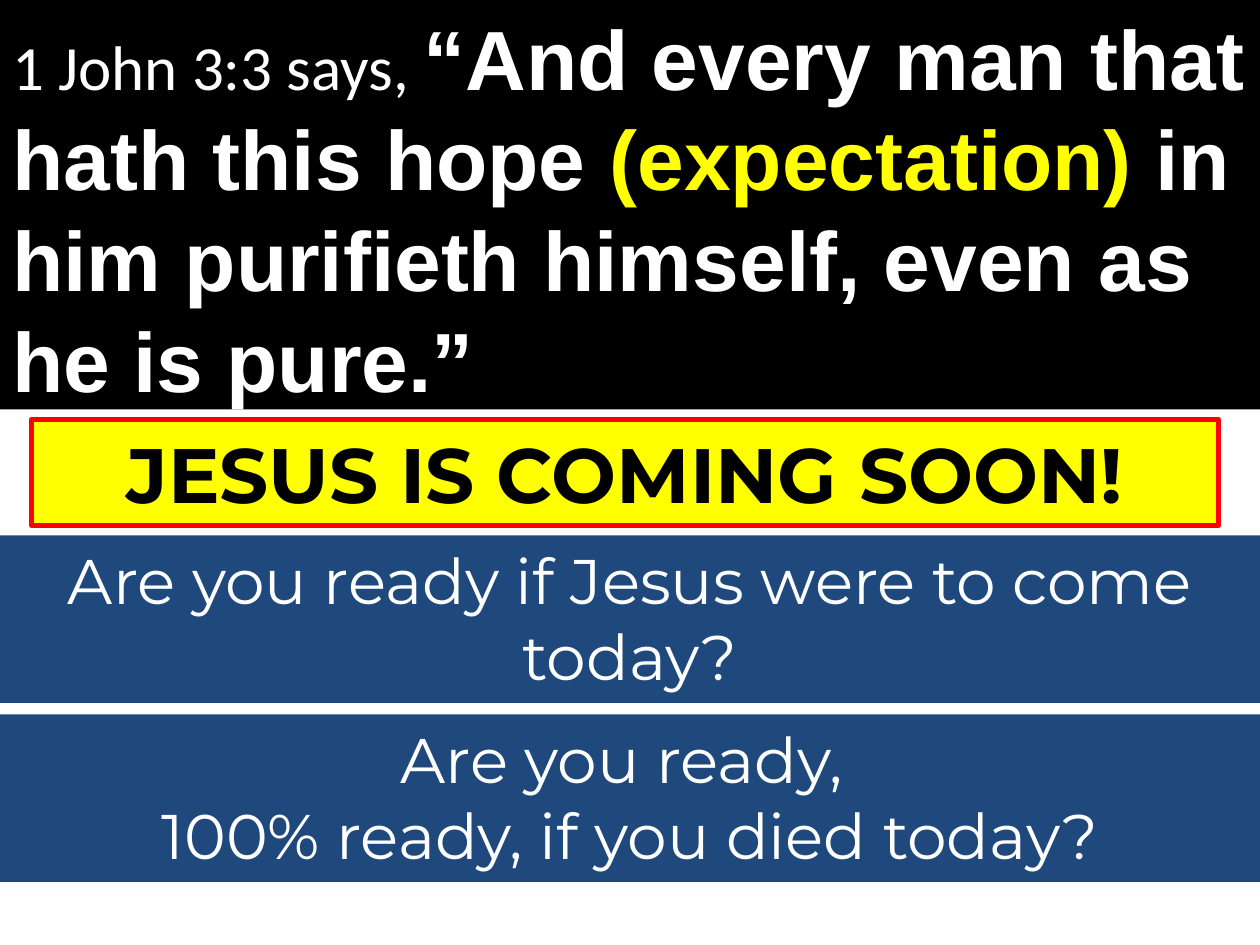
from pptx import Presentation
from pptx.dml.color import RGBColor
from pptx.enum.shapes import MSO_SHAPE
from pptx.enum.text import MSO_ANCHOR, MSO_AUTO_SIZE, PP_ALIGN
from pptx.util import Inches, Pt

RECT = MSO_SHAPE.RECTANGLE
TOP, MIDDLE = MSO_ANCHOR.TOP, MSO_ANCHOR.MIDDLE
LEFT, CENTER = PP_ALIGN.LEFT, PP_ALIGN.CENTER
GROW, FIXED = MSO_AUTO_SIZE.SHAPE_TO_FIT_TEXT, MSO_AUTO_SIZE.NONE

BLACK = RGBColor(0x00, 0x00, 0x00)
WHITE = RGBColor(0xFF, 0xFF, 0xFF)
YELLOW = RGBColor(0xFF, 0xFF, 0x00)
RED = RGBColor(0xFF, 0x00, 0x00)
BLUE = RGBColor(0x1F, 0x49, 0x7D)

WIDTH = 10
BAND_TOP, BAND_HIGH, BAND_STEP = 4.25, 1.33, 1.42


def add_run(para, text, font, size, color, bold=False):
    run = para.add_run()
    run.text = text
    run.font.name = font
    run.font.size = Pt(size)
    run.font.color.rgb = color
    run.font.bold = bold


def set_frame(shape, anchor, fit=FIXED):
    frame = shape.text_frame
    frame.word_wrap = True
    frame.auto_size = fit
    frame.vertical_anchor = anchor
    frame.margin_left = frame.margin_right = Inches(0.1)
    frame.margin_top = frame.margin_bottom = Inches(0.05)
    return frame


def add_panel(slide, top, height, fill):
    panel = slide.shapes.add_shape(
        RECT, Inches(0), Inches(top), Inches(WIDTH), Inches(height))
    panel.shadow.inherit = False
    panel.fill.solid()
    panel.fill.fore_color.rgb = fill
    panel.line.fill.background()
    return panel


def set_title(slide, text):
    title = slide.shapes.title
    title.left, title.top = Inches(0.25), Inches(3.33)
    title.width, title.height = Inches(9.42), Inches(0.84)
    title.fill.solid()
    title.fill.fore_color.rgb = YELLOW
    title.line.color.rgb = RED
    title.line.width = Pt(3)
    para = set_frame(title, MIDDLE, GROW).paragraphs[0]
    para.alignment = CENTER
    add_run(para, text, "Montserrat", 44, BLACK, True)


def add_verse(slide):
    panel = add_panel(slide, 0, 3.25, BLACK)
    para = set_frame(panel, TOP).paragraphs[0]
    para.alignment = LEFT
    add_run(para, "1 John 3:3 says, ", "Calibri", 36, WHITE)
    for text, color in (
        ("“And every man that hath this hope ", WHITE),
        ("(expectation)", YELLOW),
        (" in him purifieth himself, even as he is pure.”", WHITE),
    ):
        add_run(para, text, "Arial", 48, color, True)


def add_band(slide, top, lines):
    frame = set_frame(add_panel(slide, top, BAND_HIGH, BLUE), TOP)
    for i, text in enumerate(lines):
        para = frame.add_paragraph() if i else frame.paragraphs[0]
        para.alignment = CENTER
        add_run(para, text, "Montserrat", 36, WHITE)


def main():
    deck = Presentation()
    deck.slide_width, deck.slide_height = Inches(WIDTH), Inches(7.5)
    slide = deck.slides.add_slide(deck.slide_layouts[5])

    # Banner and verse
    set_title(slide, "JESUS IS COMING SOON!")
    add_verse(slide)

    # Question bands
    asks = (
        ["Are you ready if Jesus were to come today?"],
        ["Are you ready, ", "100% ready, if you died today?"],
    )
    for i, lines in enumerate(asks):
        add_band(slide, BAND_TOP + i * BAND_STEP, lines)

    deck.save("out.pptx")


if __name__ == "__main__":
    main()
